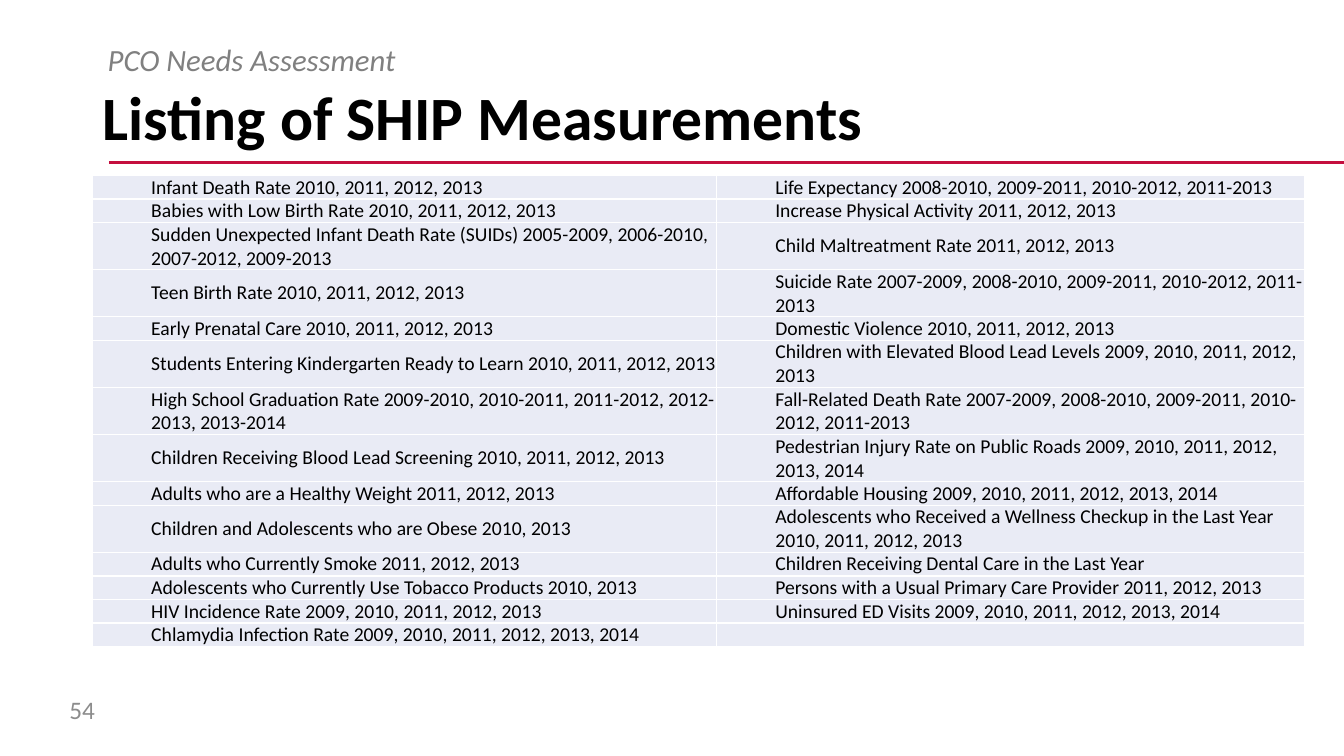
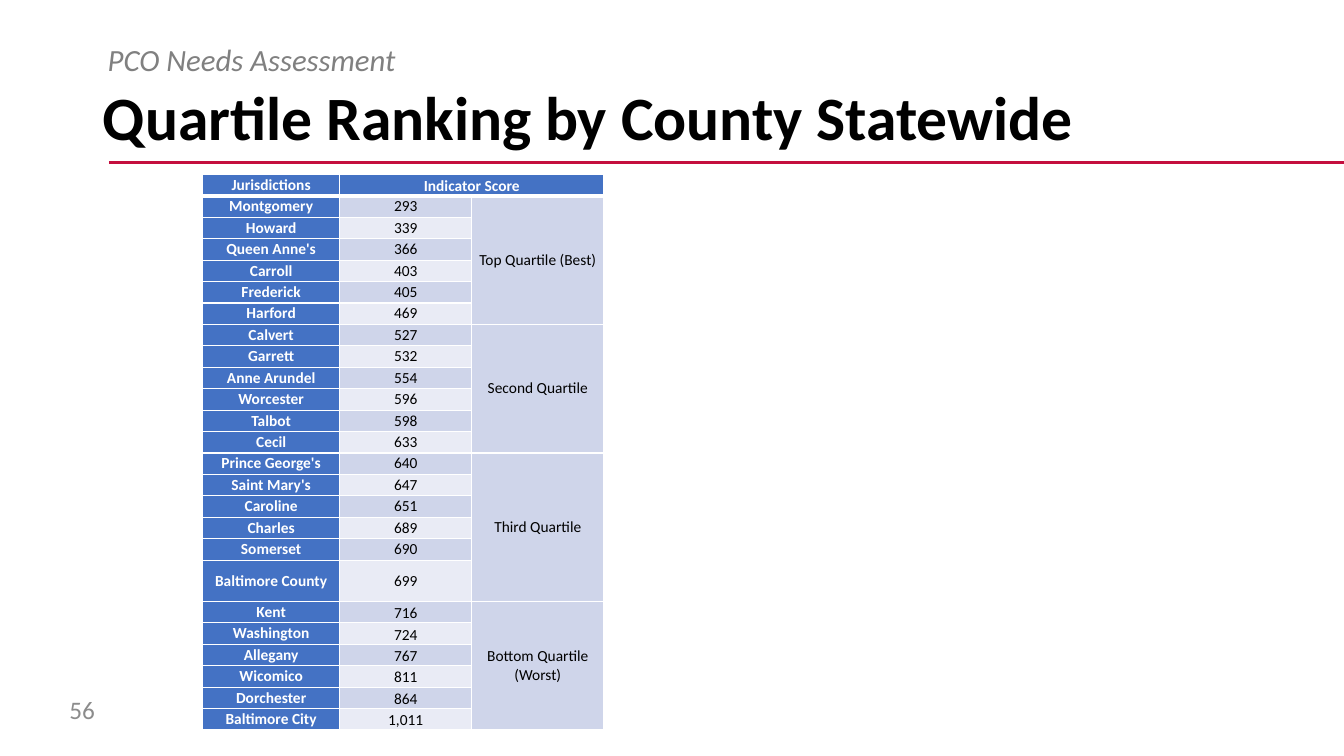
from lxml import etree
from pptx import Presentation
from pptx.dml.color import RGBColor
from pptx.enum.shapes import MSO_CONNECTOR
from pptx.enum.text import MSO_ANCHOR as Anchor, MSO_AUTO_SIZE, PP_ALIGN as Align
from pptx.oxml.ns import qn
from pptx.util import Inches, Pt

COLORS = {
    "black": "000000", "white": "FFFFFF", "rule": "C40E3E",
    "section": "808080", "number": "8C8C8C",
    "header": "4472C4", "band": "CFD5EA", "light": "E9EBF5",
}
FONT = "Calibri"
TITLE_ONLY = 5

MEASUREMENTS = [
    ("Infant Death Rate 2010, 2011, 2012, 2013",
     "Life Expectancy 2008-2010, 2009-2011, 2010-2012, 2011-2013"),
    ("Babies with Low Birth Rate 2010, 2011, 2012, 2013",
     "Increase Physical Activity 2011, 2012, 2013"),
    ("Sudden Unexpected Infant Death Rate (SUIDs) 2005-2009, 2006-2010, 2007-2012, 2009-2013",
     "Child Maltreatment Rate 2011, 2012, 2013"),
    ("Teen Birth Rate 2010, 2011, 2012, 2013",
     "Suicide Rate 2007-2009, 2008-2010, 2009-2011, 2010-2012, 2011-2013"),
    ("Early Prenatal Care 2010, 2011, 2012, 2013",
     "Domestic Violence 2010, 2011, 2012, 2013"),
    ("Students Entering Kindergarten Ready to Learn 2010, 2011, 2012, 2013",
     "Children with Elevated Blood Lead Levels 2009, 2010, 2011, 2012, 2013"),
    ("High School Graduation Rate 2009-2010, 2010-2011, 2011-2012, 2012-2013, 2013-2014",
     "Fall-Related Death Rate 2007-2009, 2008-2010, 2009-2011, 2010-2012, 2011-2013"),
    ("Children Receiving Blood Lead Screening 2010, 2011, 2012, 2013",
     "Pedestrian Injury Rate on Public Roads 2009, 2010, 2011, 2012, 2013, 2014"),
    ("Adults who are a Healthy Weight 2011, 2012, 2013",
     "Affordable Housing 2009, 2010, 2011, 2012, 2013, 2014"),
    ("Children and Adolescents who are Obese 2010, 2013",
     "Adolescents who Received a Wellness Checkup in the Last Year 2010, 2011, 2012, 2013"),
    ("Adults who Currently Smoke 2011, 2012, 2013",
     "Children Receiving Dental Care in the Last Year"),
    ("Adolescents who Currently Use Tobacco Products 2010, 2013",
     "Persons with a Usual Primary Care Provider 2011, 2012, 2013"),
    ("HIV Incidence Rate 2009, 2010, 2011, 2012, 2013",
     "Uninsured ED Visits 2009, 2010, 2011, 2012, 2013, 2014"),
    ("Chlamydia Infection Rate 2009, 2010, 2011, 2012, 2013, 2014", ""),
]
TWO_LINE_ROWS = {2, 3, 5, 6, 7, 9}

QUARTILES = {
    "Top Quartile (Best)": [
        ("Montgomery", "293"), ("Howard", "339"), ("Queen Anne's", "366"),
        ("Carroll", "403"), ("Frederick", "405"), ("Harford", "469")],
    "Second Quartile": [
        ("Calvert", "527"), ("Garrett", "532"), ("Anne Arundel", "554"),
        ("Worcester", "596"), ("Talbot", "598"), ("Cecil", "633")],
    "Third Quartile": [
        ("Prince George's", "640"), ("Saint Mary's", "647"), ("Caroline", "651"),
        ("Charles", "689"), ("Somerset", "690"), ("Baltimore County", "699")],
    "Bottom Quartile (Worst)": [
        ("Kent", "716"), ("Washington", "724"), ("Allegany", "767"),
        ("Wicomico", "811"), ("Dorchester", "864"), ("Baltimore City", "1,011")],
}


def color(name):
    return RGBColor.from_string(COLORS[name])


class DeckBuilder:
    def __init__(self):
        self.deck = Presentation()
        self.deck.slide_width, self.deck.slide_height = Inches(13.33), Inches(7.5)
        self.page = None

    def add_page(self, title, number):
        self.page = self.deck.slides.add_slide(self.deck.slide_layouts[TITLE_ONLY])
        self.rule()
        self.title(title)
        self.text("PCO Needs Assessment", (0.97, 0.4, 11.45, 0.38), 22, "section",
                  italic=True, spacing=0.9)
        self.text(number, (0.59, 6.84, 0.59, 0.4), 18, "number", anchor=Anchor.MIDDLE)

    def add_span(self, frame, text, size, ink, bold=False, italic=False, align=Align.LEFT):
        """Put one formatted run in the first paragraph and return that paragraph."""
        para = frame.paragraphs[0]
        para.alignment = align
        span = para.add_run()
        span.text = text
        font = span.font
        font.name, font.size, font.bold, font.italic = FONT, Pt(size), bold, italic
        font.color.rgb = color(ink)
        return para

    def rule(self):
        line = self.page.shapes.add_connector(
            MSO_CONNECTOR.STRAIGHT, Inches(1.08), Inches(1.61), Inches(13.33), Inches(1.61))
        line.line.color.rgb = color("rule")
        line.line.width = Pt(2.25)
        etree.SubElement(line._element.spPr, qn("a:effectLst"))

    def title(self, text):
        box = self.page.shapes.title
        box.left, box.top, box.width, box.height = map(Inches, (0.92, 0.65, 11.5, 1.09))
        frame = box.text_frame
        frame.auto_size = MSO_AUTO_SIZE.NONE
        frame.vertical_anchor = Anchor.MIDDLE
        self.add_span(frame, text, 44, "black", bold=True).line_spacing = 0.9

    def text(self, text, place, size, ink, italic=False, anchor=Anchor.TOP, spacing=1.0):
        frame = self.page.shapes.add_textbox(*map(Inches, place)).text_frame
        frame.word_wrap = True
        frame.vertical_anchor = anchor
        self.add_span(frame, text, size, ink, italic=italic).line_spacing = spacing

    def table(self, left, top, widths, heights):
        """Add a table without banding, sized by its columns and rows."""
        table = self.page.shapes.add_table(
            len(heights), len(widths), Inches(left), Inches(top),
            Inches(sum(widths)), Inches(sum(heights))).table
        table.first_row = table.horz_banding = False
        for column, width in zip(table.columns, widths):
            column.width = Inches(width)
        for row, height in zip(table.rows, heights):
            row.height = Inches(height)
        return table

    def cell(self, cell, text, fill, size, ink="black", bold=False, align=Align.LEFT,
             anchor=Anchor.MIDDLE, sides=(0.07, 0.07), top_line=1, bottom_line=1):
        cell.margin_left, cell.margin_right = map(Inches, sides)
        cell.margin_top = cell.margin_bottom = 0
        cell.vertical_anchor = anchor
        properties = cell._tc.get_or_add_tcPr()
        for side, points in (("L", 1), ("R", 1), ("T", top_line), ("B", bottom_line)):
            border = etree.SubElement(properties, qn(f"a:ln{side}"), w=str(Pt(points)))
            paint = etree.SubElement(border, qn("a:solidFill"))
            etree.SubElement(paint, qn("a:srgbClr"), val=COLORS["white"])
        cell.fill.solid()
        cell.fill.fore_color.rgb = color(fill)
        if text:
            self.add_span(cell.text_frame, text, size, ink, bold, align=align)
        else:
            para = cell.text_frame.paragraphs[0]
            etree.SubElement(para._p, qn("a:endParaRPr"), sz=str(size * 100))


def measurements_page(builder):
    builder.add_page("Listing of SHIP Measurements", "54")
    heights = [0.44 if row in TWO_LINE_ROWS else 0.22 for row in range(len(MEASUREMENTS))]
    table = builder.table(0.92, 1.74, (6.19, 5.83), heights)
    for row, pair in enumerate(MEASUREMENTS):
        for column, text in enumerate(pair):
            builder.cell(table.cell(row, column), text, "light", 14, sides=(0.58, 0))


def ranking_page(builder):
    builder.add_page("Quartile Ranking by County Statewide", "56")
    counties = [(*county, quartile) for quartile, group in QUARTILES.items()
                for county in group]
    tall = 0.41
    regular = (5.52 - tall) / len(counties)
    heights = [regular] + [tall if name == "Baltimore County" else regular
                           for name, _, _ in counties]
    table = builder.table(2.01, 1.73, (1.36, 1.31, 1.31), heights)

    headings = (("Jurisdictions", Anchor.MIDDLE), ("Indicator Score", Anchor.BOTTOM),
                ("", Anchor.BOTTOM))
    for column, (heading, anchor) in enumerate(headings):
        builder.cell(table.cell(0, column), heading, "header", 11, "white", True,
                     Align.CENTER, anchor, bottom_line=3)
    table.cell(0, 1).merge(table.cell(0, 2))

    size = len(counties) // len(QUARTILES)
    for row, (name, score, quartile) in enumerate(counties, start=1):
        first = (row - 1) % size == 0
        in_last = row > len(counties) - size
        style = {"size": 11, "align": Align.CENTER, "top_line": 3 if row == 1 else 1}
        builder.cell(table.cell(row, 0), name, "header", ink="white", bold=True, **style)
        builder.cell(table.cell(row, 1), score, "band" if row % 2 else "light",
                     anchor=Anchor.BOTTOM if in_last else Anchor.MIDDLE, **style)
        builder.cell(table.cell(row, 2), quartile if first else "", "band", **style)
        if first:
            table.cell(row, 2).merge(table.cell(row + size - 1, 2))


def main():
    builder = DeckBuilder()
    measurements_page(builder)
    ranking_page(builder)
    builder.deck.save("out.pptx")


if __name__ == "__main__":
    main()
